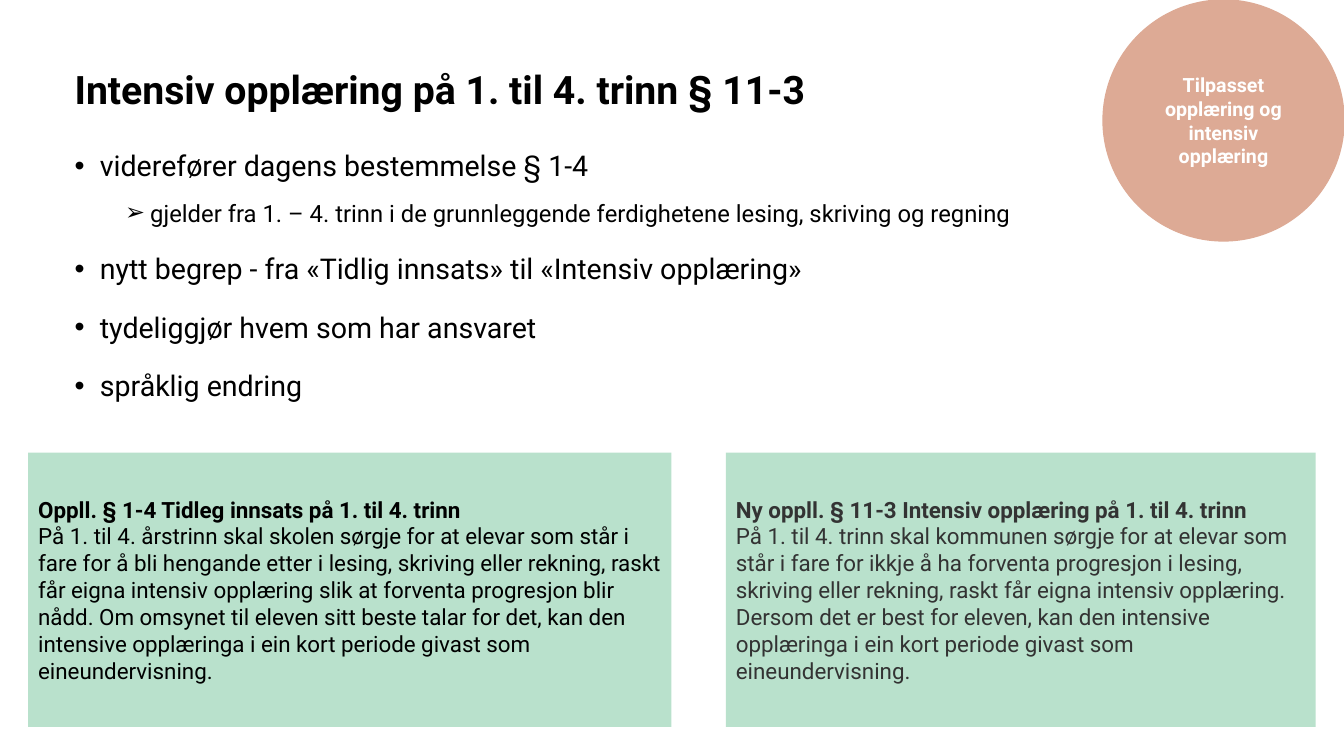
from lxml import etree
from pptx import Presentation
from pptx.dml.color import RGBColor
from pptx.enum.shapes import MSO_SHAPE
from pptx.enum.text import MSO_ANCHOR, MSO_AUTO_SIZE, PP_ALIGN
from pptx.oxml.ns import qn
from pptx.util import Inches, Pt

RECTANGLE = MSO_SHAPE.RECTANGLE
CIRCLE = MSO_SHAPE.FLOWCHART_CONNECTOR
LEFT, CENTER = PP_ALIGN.LEFT, PP_ALIGN.CENTER
TOP, MIDDLE = MSO_ANCHOR.TOP, MSO_ANCHOR.MIDDLE
NO_AUTOFIT = MSO_AUTO_SIZE.NONE

FONT = "Roboto"
BLACK, GREY, WHITE = "000000", "333333", "FFFFFF"
GREEN, SALMON = "B9E1CC", "DDAA95"
BOX_TOP, BOX_HEIGHT = 4.49, 2.72

TITLE = "Intensiv opplæring på 1. til 4. trinn § 11-3"
TOPIC = "Tilpasset opplæring og intensiv opplæring"
POINTS = [
    (0, "viderefører dagens bestemmelse § 1-4"),
    (1, "gjelder fra 1. – 4. trinn i de grunnleggende ferdighetene lesing, skriving og regning"),
    (0, "nytt begrep - fra «Tidlig innsats» til «Intensiv opplæring»"),
    (0, "tydeliggjør hvem som har ansvaret"),
    (0, "språklig endring"),
]
LEVELS = [("•", 0.25, 20.4, 10), ("➢", 0.75, 17, 5)]
OLD_HEADING = "Oppll. § 1-4 Tidleg innsats på 1. til 4. trinn"
OLD_LAW = (
    "På 1. til 4. årstrinn skal skolen sørgje for at elevar som står i fare for å bli "
    "hengande etter i lesing, skriving eller rekning, raskt får eigna intensiv opplæring "
    "slik at forventa progresjon blir nådd. Om omsynet til eleven sitt beste talar for det, "
    "kan den intensive opplæringa i ein kort periode givast som eineundervisning."
)
NEW_HEADING = "Ny oppll. § 11-3 Intensiv opplæring på 1. til 4. trinn"
NEW_LAW = (
    "På 1. til 4. trinn skal kommunen sørgje for at elevar som står i fare for ikkje å ha "
    "forventa progresjon i lesing, skriving eller rekning, raskt får eigna intensiv "
    "opplæring. Dersom det er best for eleven, kan den intensive opplæringa i ein kort "
    "periode givast som eineundervisning."
)


def rgb(value):
    """Turn a hex string into a colour."""
    return RGBColor.from_string(value)


def add_run(paragraph, text, size, color, bold=False):
    """Add one formatted run to a paragraph."""
    run = paragraph.add_run()
    run.text = text
    run.font.name = FONT
    run.font.size = Pt(size)
    run.font.bold = bold
    run.font.color.rgb = rgb(color)


def place(placeholder, left, top, width, height, anchor):
    """Move a placeholder and return its text frame."""
    placeholder.left, placeholder.top = Inches(left), Inches(top)
    placeholder.width, placeholder.height = Inches(width), Inches(height)
    frame = placeholder.text_frame
    frame.word_wrap = True
    frame.auto_size = NO_AUTOFIT
    frame.vertical_anchor = anchor
    return frame


def set_bullet(paragraph, symbol, indent):
    """Give a paragraph a bullet with a hanging indent."""
    properties = paragraph._p.get_or_add_pPr()
    properties.set("marL", str(Inches(indent)))
    properties.set("indent", str(Inches(-0.25)))
    etree.SubElement(properties, qn("a:buFont"), typeface="Arial")
    etree.SubElement(properties, qn("a:buChar"), char=symbol)


def fill_title(slide):
    """Fill the title placeholder."""
    heading = place(slide.shapes.title, 0.64, 0.19, 11.5, 1.45, MIDDLE).paragraphs[0]
    heading.alignment = LEFT
    heading.line_spacing = 0.9
    add_run(heading, TITLE, 28, BLACK, True)


def fill_points(slide):
    """Fill the body placeholder with the two-level list."""
    frame = place(slide.placeholders[1], 0.64, 1.32, 11.66, 2.72, TOP)
    for index, (level, text) in enumerate(POINTS):
        symbol, indent, size, space = LEVELS[level]
        point = frame.add_paragraph() if index else frame.paragraphs[0]
        point.level = level
        point.line_spacing = 1.3
        point.space_before = Pt(space)
        set_bullet(point, symbol, indent)
        add_run(point, text, size, BLACK)


def add_panel(slide, kind, left, top, width, height, color):
    """Add a plain filled shape with middle-anchored text."""
    panel = slide.shapes.add_shape(
        kind, Inches(left), Inches(top), Inches(width), Inches(height))
    panel.shadow.inherit = False
    panel.fill.solid()
    panel.fill.fore_color.rgb = rgb(color)
    panel.line.fill.background()
    panel.text_frame.word_wrap = True
    panel.text_frame.vertical_anchor = MIDDLE
    return panel


def add_topic(slide):
    """Add the topic circle in the corner."""
    circle = add_panel(slide, CIRCLE, 10.94, 0, 2.39, 2.39, SALMON)
    circle.line.color.rgb = rgb(SALMON)
    circle.line.width = Pt(1)
    label = circle.text_frame.paragraphs[0]
    label.alignment = CENTER
    add_run(label, TOPIC, 14, WHITE, True)


def add_law_box(slide, left, width, heading, law, color):
    """Add a box with a bold heading above the wording of the law."""
    frame = add_panel(slide, RECTANGLE, left, BOX_TOP, width, BOX_HEIGHT, GREEN).text_frame
    for paragraph, text, bold in (
            (frame.paragraphs[0], heading, True), (frame.add_paragraph(), law, False)):
        paragraph.alignment = LEFT
        add_run(paragraph, text, 16, color, bold)


def main():
    """Build the slide and save it."""
    deck = Presentation()
    deck.slide_width, deck.slide_height = Inches(13.33), Inches(7.5)
    slide = deck.slides.add_slide(deck.slide_layouts[1])
    fill_title(slide)
    fill_points(slide)
    add_topic(slide)
    add_law_box(slide, 0.28, 6.38, OLD_HEADING, OLD_LAW, BLACK)
    add_law_box(slide, 7.2, 5.85, NEW_HEADING, NEW_LAW, GREY)
    deck.save("out.pptx")


if __name__ == "__main__":
    main()
